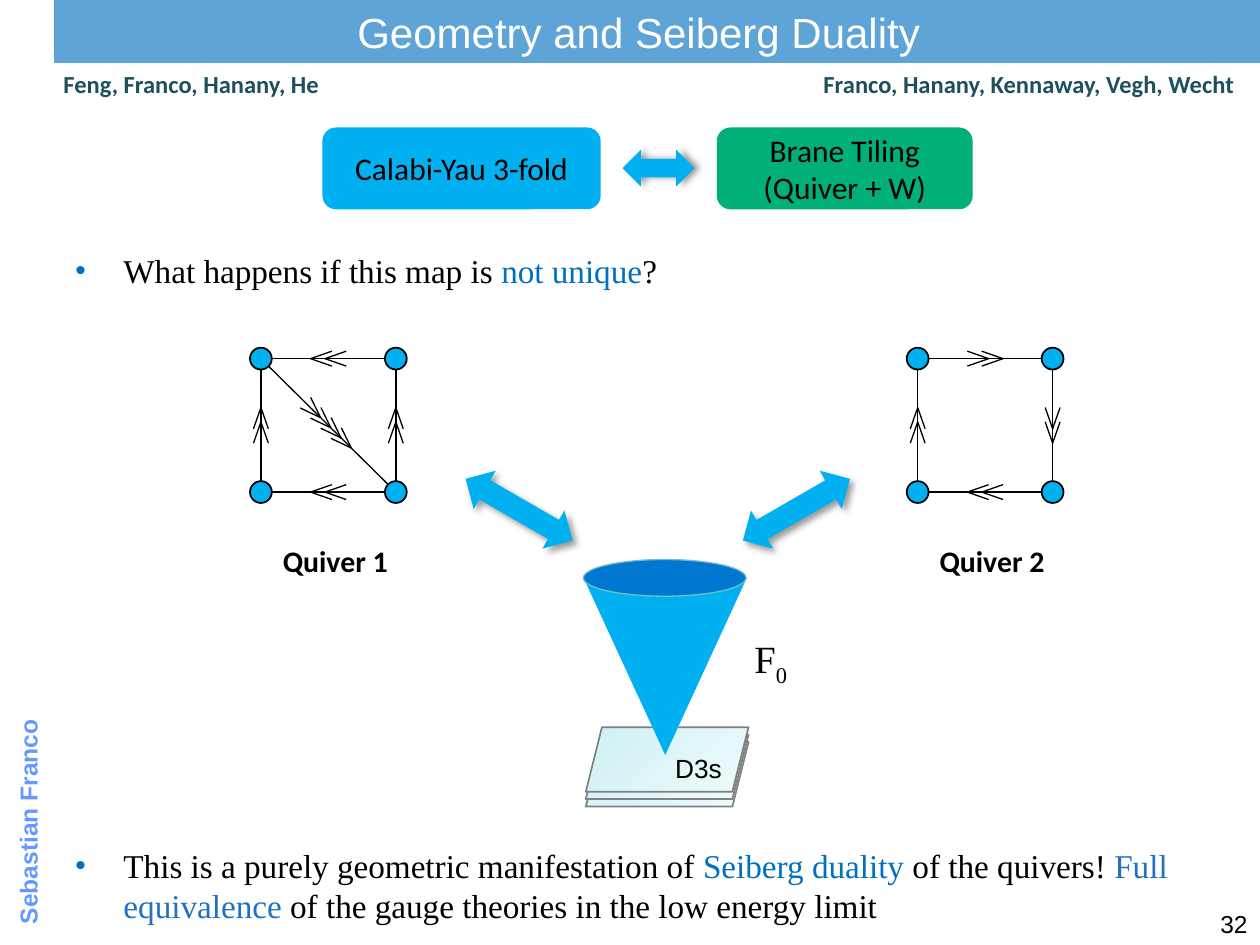
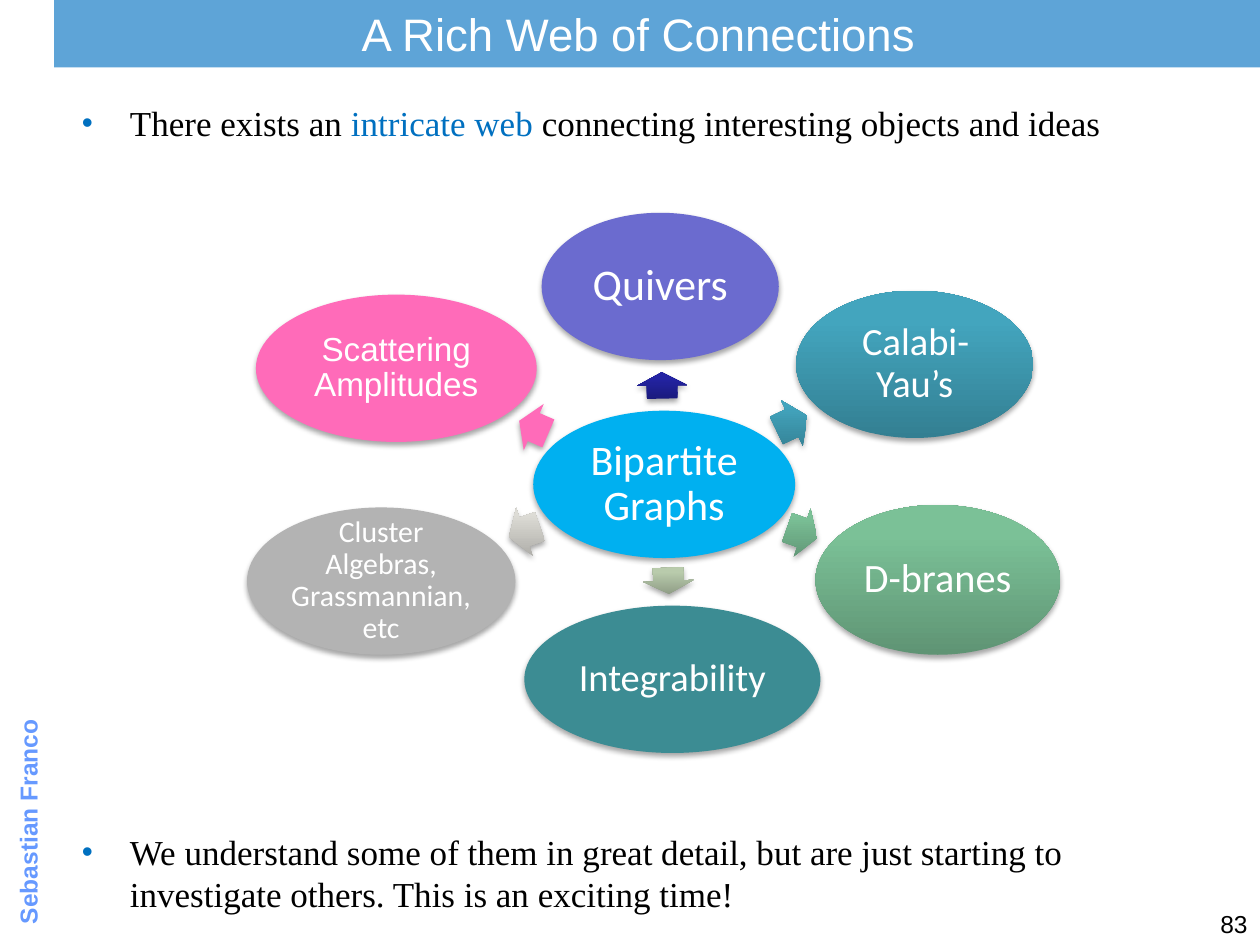
import math

from lxml import etree
from pptx import Presentation
from pptx.dml.color import RGBColor
from pptx.enum.shapes import MSO_CONNECTOR, MSO_SHAPE
from pptx.enum.text import MSO_ANCHOR, PP_ALIGN
from pptx.oxml.ns import qn
from pptx.util import Cm, Pt

RECT = MSO_SHAPE.RECTANGLE
ROUND = MSO_SHAPE.ROUNDED_RECTANGLE
OVAL = MSO_SHAPE.OVAL
CONE = MSO_SHAPE.ISOSCELES_TRIANGLE
SHEET = MSO_SHAPE.PARALLELOGRAM
ARROW = MSO_SHAPE.RIGHT_ARROW
DOUBLE = MSO_SHAPE.LEFT_RIGHT_ARROW
STRAIGHT = MSO_CONNECTOR.STRAIGHT
LEFT, CENTER, RIGHT = PP_ALIGN.LEFT, PP_ALIGN.CENTER, PP_ALIGN.RIGHT
MIDDLE = MSO_ANCHOR.MIDDLE

SANS, BODY, SERIF = "Arial", "Calibri", "Times New Roman"
BLACK, WHITE, GRAY = "000000", "FFFFFF", "808080"
BLUE, SKY, GREEN = "0070C0", "00B0F0", "01AF79"
NAVY = ("1B1B7E", "2323A3", 0.8, 90)
TEAL = ("337F92", "43A5BE", 0.8, 90)
LEAF = ("5F9474", "7BC197", 0.8, 90)
SAGE = ("8E9C85", "B9CBAC", 0.8, 90)
SILVER = ("AAA9A4", "DDDCD6", 0.8, 90)
ICE = ("CEF1F4", "EFFAFB", 1, 315)
SOFT = (35, 3.1, 1.8, 90)

HUB = ("Bipartite Graphs", (5.77, 3.99, 5.28, 2.97), SKY, 24, BODY)
TOPICS = [
    (("Quivers", (5.94, 0, 4.78, 2.97), "6B6BCF", 25, BODY),
     (8.1, 2.97, 0.53, 1.02), 268.9, NAVY),
    (("Calabi-Yau’s", (11.07, 1.57, 4.78, 2.97), TEAL, 22, BODY),
     (10.64, 3.73, 0.69, 1.02), 334.5, TEAL),
    (("D-branes", (11.46, 5.89, 4.93, 3.02), LEAF, 23, BODY),
     (10.87, 5.94, 0.64, 1.02), 19.4, LEAF),
    (("Integrability", (5.59, 7.92, 5.97, 2.97), "3C8C93", 22, BODY),
     (8.23, 6.91, 0.53, 1.02), 87.6, SAGE),
    (("Cluster Algebras, Grassmannian, etc", (0, 5.94, 5.41, 2.97),
      "B3B3B3", 17, BODY),
     (5.26, 5.92, 0.66, 1.02), 160.9, SILVER),
    (("Scattering Amplitudes", (0.18, 1.65, 5.66, 2.97), "FF6BB9", 19, SANS),
     (5.46, 3.81, 0.64, 1.02), 203.3, "FF6BB9"),
]


def color(code):
    return RGBColor.from_string(code)


def add(parent, tag, **attrs):
    node = etree.SubElement(parent, qn(tag))
    for key, value in attrs.items():
        node.set(key, str(value))
    return node


def shift(box, x, y):
    return (box[0] + x, box[1] + y, *box[2:])


def paint(shape, fill):
    if isinstance(fill, str):
        shape.fill.solid()
        shape.fill.fore_color.rgb = color(fill)
        return
    first, last, end, angle = fill
    shape.fill.gradient()
    shape.fill.gradient_angle = angle
    stops = shape.fill.gradient_stops
    for stop, code, spot in zip(stops, (first, last), (0, end)):
        stop.color.rgb = color(code)
        stop.position = spot
    shape._element.spPr.find(qn("a:gradFill")).set("rotWithShape", "0")


def shade(shape, alpha, blur, gap, angle):
    effects = shape._element.spPr.find(qn("a:effectLst"))
    outer = add(effects, "a:outerShdw", blurRad=Pt(blur), dist=Pt(gap),
                dir=angle * 60000, algn="ctr", rotWithShape=0)
    add(add(outer, "a:srgbClr", val=BLACK), "a:alpha", val=alpha * 1000)


def draw(slide, kind, box, fill, line=None, width=1, turn=0, shadow=None):
    shape = slide.shapes.add_shape(kind, *map(Cm, box))
    shape.shadow.inherit = False
    shape.rotation = turn
    paint(shape, fill)
    if line:
        shape.line.color.rgb = color(line)
        shape.line.width = Pt(width)
    else:
        shape.line.fill.background()
    if shadow:
        shade(shape, *shadow)
    return shape


def stroke(slide, start, end):
    line = slide.shapes.add_connector(STRAIGHT, *map(Cm, (*start, *end)))
    line.line.color.rgb = color(BLACK)
    line.line.width = Pt(0.75)
    add(line._element.spPr, "a:effectLst")


def write(para, text, size, font, code=BLACK, bold=False):
    run = para.add_run()
    run.text = text
    run.font.size = Pt(size)
    run.font.name = font
    run.font.bold = bold
    run.font.color.rgb = color(code)
    return run


def label(slide, box, text, size, font, code=BLACK, bold=False, align=LEFT):
    shape = slide.shapes.add_textbox(*map(Cm, box))
    shape.text_frame.word_wrap = True
    para = shape.text_frame.paragraphs[0]
    para.alignment = align
    write(para, text, size, font, code, bold)
    return shape


def fit(shape, lines, size, font, code, inset):
    frame = shape.text_frame
    frame.word_wrap = True
    frame.vertical_anchor = MIDDLE
    frame.margin_left = frame.margin_right = Cm(inset)
    frame.margin_top = frame.margin_bottom = Cm(inset)
    for i, text in enumerate(lines):
        para = frame.add_paragraph() if i else frame.paragraphs[0]
        para.alignment = CENTER
        write(para, text, size, font, code)
    return frame


def bullet(slide, box, size, parts):
    shape = slide.shapes.add_textbox(*map(Cm, box))
    shape.text_frame.word_wrap = True
    para = shape.text_frame.paragraphs[0]
    props = para._p.get_or_add_pPr()
    props.set("marL", str(Cm(0.97)))
    props.set("indent", str(Cm(-0.97)))
    add(add(props, "a:buClr"), "a:srgbClr", val=BLUE)
    add(props, "a:buSzPct", val=90000)
    add(props, "a:buFont", typeface=SANS)
    add(props, "a:buChar", char="•")
    for text, code in parts:
        write(para, text, size, SERIF, code)


def base(deck, title, size, height, number):
    slide = deck.slides.add_slide(deck.slide_layouts[6])
    side = label(slide, (-3.25, 14.22, 8.05, 1.27), "Sebastian Franco",
                 14, SANS, "6699FF", True)
    side.rotation = 270
    band = draw(slide, RECT, (1.09, 0, 24.31, height), BLUE)
    tint = band._element.spPr.find(qn("a:solidFill"))[0]
    add(tint, "a:alpha", val=63000)
    label(slide, (4.11, 0, 17.53, height), title, size, SANS, WHITE,
          align=CENTER)
    label(slide, (24.13, 18.21, 1.27, 0.84), number, 14, SANS, align=RIGHT)
    return slide


def link(slide, start, end, count, radius):
    span = math.dist(start, end)
    ux, uy = ((b - a) / span for a, b in zip(start, end))

    def point(along, across=0):
        return (start[0] + ux * along - uy * across,
                start[1] + uy * along + ux * across)

    stroke(slide, point(radius), point(span - radius))
    wing, half, step = 0.43, 0.15, 0.29
    tail = (span - wing - step * (count - 1)) / 2
    for i in range(count):
        back = tail + i * step
        for side in (-half, half):
            stroke(slide, point(back, side), point(back + wing))


def quiver(slide, x, y, name, edges):
    size, wide, high = 0.44, 2.72, 2.69
    spots = [(x + col * wide, y + row * high)
             for row in range(2) for col in range(2)]
    hubs = [(left + size / 2, top + size / 2) for left, top in spots]
    for start, end, count in edges:
        link(slide, hubs[start], hubs[end], count, size / 2)
    for spot in spots:
        draw(slide, OVAL, (*spot, size, size), SKY, BLACK)
    label(slide, (x - 0.25, y + 3.81, 3.94, 1.27), name, 17, BODY,
          bold=True, align=CENTER)


def cone(slide, x, y):
    for i in (2, 1, 0):
        draw(slide, SHEET, (x + 0.05, y + 3.38 + i * 0.15, 3.28, 1.3),
             ICE, GRAY)
    draw(slide, CONE, (x, y + 0.36, 3.3, 3.58), SKY, turn=180)
    label(slide, (x + 1.6, y + 3.76, 1.47, 0.91), "D3s", 15, SANS)
    draw(slide, OVAL, (x, y, 3.28, 0.74), "0078D2", "72BFC5", 0.75)
    mark = label(slide, (x + 3.2, y + 1.4, 5.36, 1.27), "F", 22, SERIF)
    sub = write(mark.text_frame.paragraphs[0], "0", 22, SERIF)
    sub.font._element.set("baseline", "-25000")


def match(slide, x, y):
    left = draw(slide, ROUND, (x, y, 5.61, 1.65), SKY)
    fit(left, ["Calabi-Yau 3-fold"], 18, BODY, BLACK, 0)
    right = draw(slide, ROUND, (x + 7.95, y, 5.16, 1.65), GREEN)
    fit(right, ["Brane Tiling", "(Quiver + W)"], 18, BODY, BLACK, 0)
    draw(slide, DOUBLE, (x + 6.05, y + 0.45, 1.45, 0.74), SKY,
         shadow=(40, 4, 3, 0))


def duality(deck):
    slide = base(deck, "Geometry and Seiberg Duality", 24, 1.27, "32")
    for box, text, align in (
        ((1.03, 1.27, 9, 1.07), "Feng, Franco, Hanany, He", LEFT),
        ((13.13, 1.27, 12, 1.07),
         "Franco, Hanany, Kennaway, Vegh, Wecht", RIGHT),
    ):
        label(slide, box, text, 14, BODY, "1D4F5D", True, align)
    match(slide, 6.5, 2.57)
    bullet(slide, (1.27, 4.93, 23.77, 1.27), 19, [
        ("What happens if this map is ", BLACK),
        ("not unique", BLUE),
        ("?", BLACK),
    ])
    quiver(slide, 5.04, 7.01, "Quiver 1",
           [(1, 0, 2), (3, 1, 2), (2, 0, 2), (3, 2, 2), (0, 3, 4)])
    quiver(slide, 18.28, 7.01, "Quiver 2",
           [(0, 1, 2), (1, 3, 2), (3, 2, 2), (2, 0, 2)])
    cone(slide, 11.76, 11.28)
    for x, turn in ((9.22, 30), (14.81, 330)):
        draw(slide, DOUBLE, (x, 9.83, 2.49, 0.89), SKY, turn=turn,
             shadow=(40, 4, 3, 45))
    bullet(slide, (1.27, 16.92, 23.77, 1.27), 19, [
        ("This is a purely geometric manifestation of ", BLACK),
        ("Seiberg duality", BLUE),
        (" of the quivers! ", BLACK),
        ("Full equivalence", "2270C0"),
        (" of the gauge theories in the low energy limit", BLACK),
    ])


def bubble(slide, x, y, text, box, fill, size, font):
    shape = draw(slide, OVAL, shift(box, x, y), fill, shadow=SOFT)
    frame = fit(shape, [text], size, font, WHITE, 0.07)
    frame.paragraphs[0].line_spacing = 0.9


def web(slide, x, y):
    bubble(slide, x, y, *HUB)
    for topic, box, turn, fill in TOPICS:
        arrow = draw(slide, ARROW, shift(box, x, y), fill, turn=turn,
                     shadow=SOFT)
        arrow.adjustments[0] = 0.6
        arrow.adjustments[1] = 0.5
        bubble(slide, x, y, *topic)


def links(deck):
    slide = base(deck, "A Rich Web of Connections", 26, 1.36, "83")
    bullet(slide, (1.4, 1.93, 23.47, 1.27), 20, [
        ("There exists an ", BLACK),
        ("intricate web ", BLUE),
        ("connecting interesting objects and ideas", BLACK),
    ])
    web(slide, 4.98, 4.29)
    bullet(slide, (1.4, 16.61, 23.47, 1.27), 20, [
        ("We understand some of them in great detail, but are just starting "
         "to investigate others. This is an exciting time!", BLACK),
    ])


def main():
    deck = Presentation()
    deck.slide_width, deck.slide_height = Cm(25.4), Cm(19.05)
    duality(deck)
    links(deck)
    deck.save("out.pptx")


if __name__ == "__main__":
    main()
